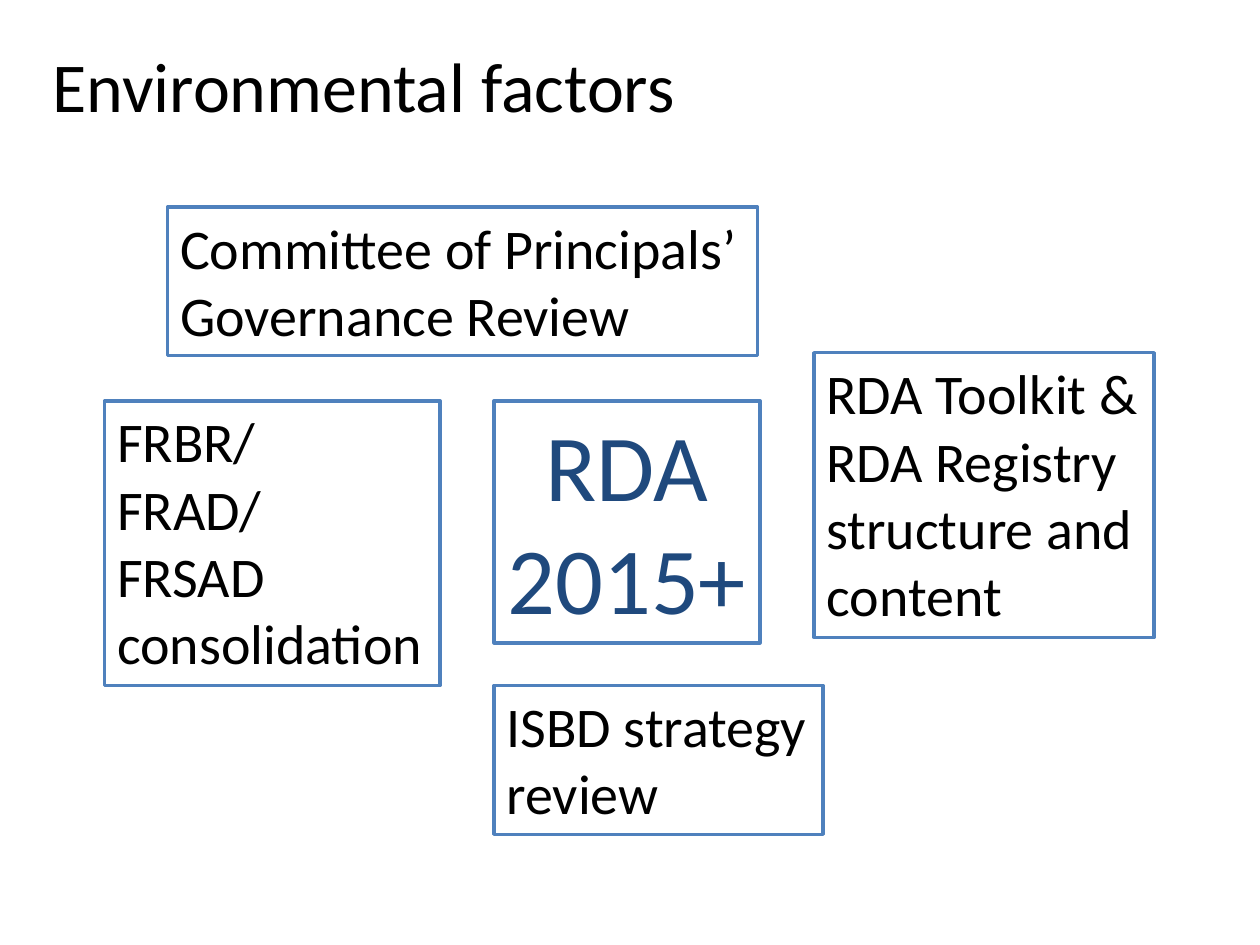
from pptx import Presentation
from pptx.dml.color import RGBColor
from pptx.enum.shapes import MSO_SHAPE
from pptx.enum.text import MSO_ANCHOR, MSO_AUTO_SIZE, PP_ALIGN
from pptx.util import Cm, Pt

RECT = MSO_SHAPE.RECTANGLE
TOP = MSO_ANCHOR.TOP
FIT = MSO_AUTO_SIZE.SHAPE_TO_FIT_TEXT
LEFT, CENTER = PP_ALIGN.LEFT, PP_ALIGN.CENTER

FONT = "Calibri"
COLORS = {"text": "000000", "border": "4F81BD", "core": "1F497D"}

# Factor boxes: left, top, width, height (cm, within the diagram) and lines
FACTORS = [
    (1.27, 0, 11.89, 3, ["Committee of Principals’", "Governance Review"]),
    (0, 3.91, 6.76, 5.74, ["FRBR/", "FRAD/", "FRSAD", "consolidation"]),
    (7.85, 9.65, 6.63, 3, ["ISBD strategy", "review"]),
    (14.3, 2.94, 6.86, 5.74,
     ["RDA Toolkit &", "RDA Registry", "structure and", "content"]),
]


def rgb(name):
    return RGBColor.from_string(COLORS[name])


def write_lines(sp, lines, size, color="text", align=LEFT):
    tf = sp.text_frame
    tf.word_wrap = False
    tf.auto_size = FIT
    tf.vertical_anchor = TOP
    tf.text = "\n".join(lines)
    for p in tf.paragraphs:
        p.alignment = align
        p.font.name = FONT
        p.font.size = Pt(size)
        p.font.color.rgb = rgb(color)


def add_title(s, left, top, width, height):
    sp = s.shapes.add_textbox(Cm(left), Cm(top), Cm(width), Cm(height))
    write_lines(sp, ["Environmental factors"], 40)


def add_box(s, left, top, width, height, lines, size=32, **style):
    sp = s.shapes.add_shape(RECT, Cm(left), Cm(top), Cm(width), Cm(height))
    sp.shadow.inherit = False
    sp.fill.background()
    sp.line.color.rgb = rgb("border")
    sp.line.width = Pt(2)
    write_lines(sp, lines, size, **style)


def add_diagram(s, left, top):
    # Surrounding factors
    for x, y, width, height, lines in FACTORS:
        add_box(s, left + x, top + y, width, height, lines)
    # Central subject
    add_box(s, left + 7.85, top + 3.91, 5.36, 4.88, ["RDA", "2015+"],
            size=54, color="core", align=CENTER)


def main():
    prs = Presentation()
    prs.slide_width, prs.slide_height = Cm(25.4), Cm(19.05)
    s = prs.slides.add_slide(prs.slide_layouts[6])
    add_title(s, 0.81, 0.74, 13.18, 1.96)
    add_diagram(s, 2.11, 4.17)
    prs.save("out.pptx")


if __name__ == "__main__":
    main()
